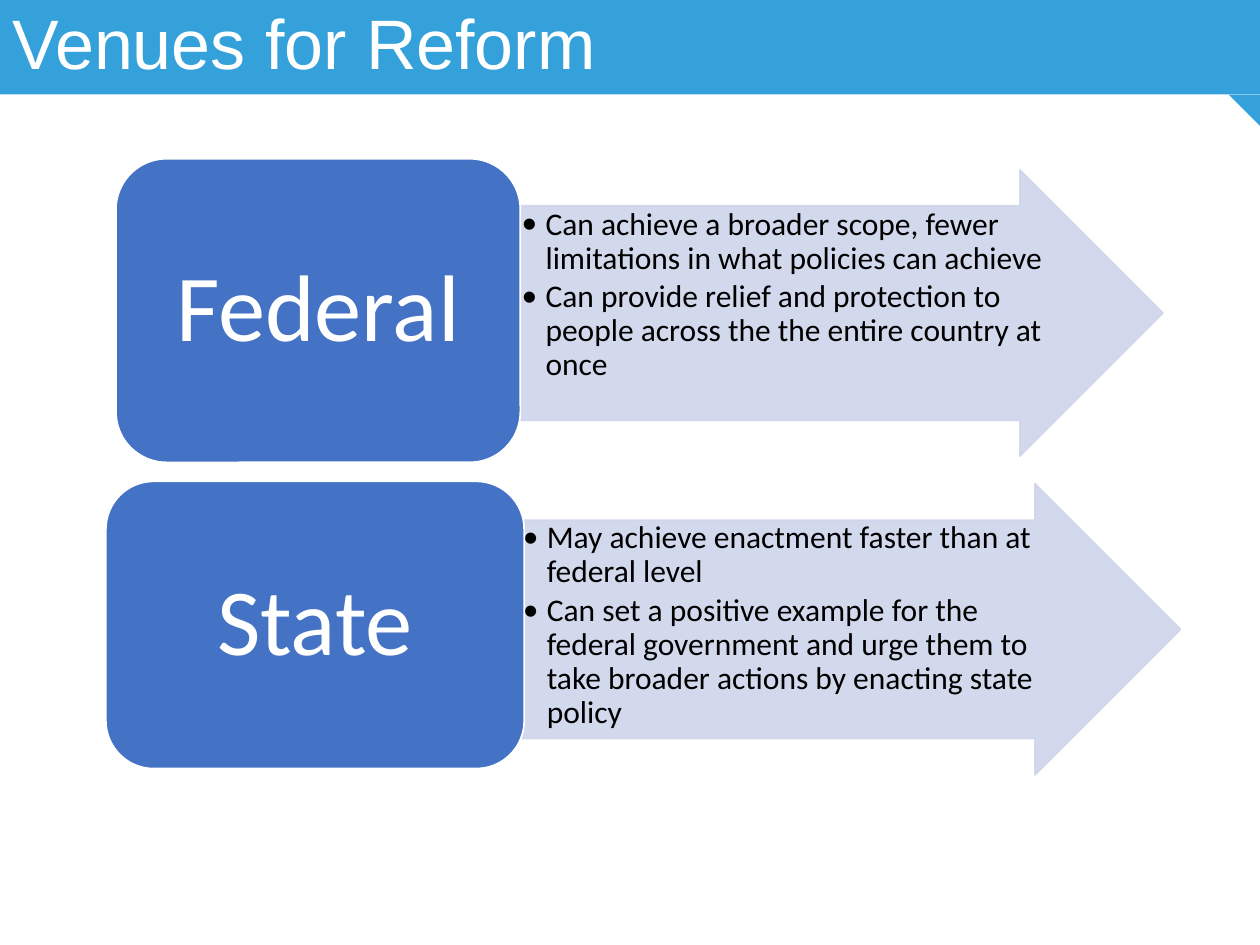
"""Build the Venues for Reform slide with federal and state arrows."""
import pptx
import pptx.dml.color
import pptx.enum.shapes
import pptx.enum.text
import pptx.oxml
import pptx.oxml.ns
import pptx.util
from pptx.util import Inches

COLORS = {"banner": "34A1DA", "arrow": "CFD5EA", "box": "4472C4", "white": "FFFFFF", "black": "000000"}
VENUES = [
    {
        "name": "Federal",
        "box": (0.92, 1.26, 3.21, 2.41),
        "arrow": (4.13, 1.35, 5.1, 2.27),
        "text": (4.13, 1.64, 4.25, 1.7),
        "points": [
            "Can achieve a broader scope, fewer limitations in what policies can achieve",
            "Can provide relief and protection to people across the the entire country at once",
        ],
    },
    {
        "name": "State",
        "box": (0.84, 3.82, 3.32, 2.28),
        "arrow": (4.14, 3.84, 5.23, 2.31),
        "text": (4.14, 4.13, 4.36, 1.73),
        "points": [
            "May achieve enactment faster than at federal level",
            "Can set a positive example for the federal government and urge them to "
            "take broader actions by enacting state policy",
        ],
    },
]
SHAPES = pptx.enum.shapes.MSO_SHAPE
ALIGN = pptx.enum.text.PP_ALIGN
ANCHOR = pptx.enum.text.MSO_ANCHOR
DRAWING = pptx.oxml.ns.nsdecls("a")
BULLET = (f'<a:buFont {DRAWING} typeface="Calibri"/>', f'<a:buChar {DRAWING} char="•"/>')

presentation = pptx.Presentation()
presentation.slide_width = Inches(10)
presentation.slide_height = Inches(7.5)
slide = presentation.slides.add_slide(presentation.slide_layouts[6])


def add_filled(kind, box, fill, line=None):
    shape = slide.shapes.add_shape(kind, *map(Inches, box))
    shape.shadow.inherit = False
    shape.fill.solid()
    shape.fill.fore_color.rgb = pptx.dml.color.RGBColor.from_string(COLORS[fill])
    if line:
        shape.line.color.rgb = pptx.dml.color.RGBColor.from_string(COLORS[line])
        shape.line.width = pptx.util.Pt(1)
    else:
        shape.line.fill.background()
    return shape


def write_text(shape, lines, font, size, color, align, anchor, margins, space_after=0):
    frame = shape.text_frame
    frame.word_wrap = True
    frame.vertical_anchor = anchor
    frame.margin_left, frame.margin_top, frame.margin_right, frame.margin_bottom = map(Inches, margins)
    frame.text = "\n".join(lines)
    for paragraph in frame.paragraphs:
        paragraph.alignment = align
        paragraph.line_spacing = 0.9
        paragraph.space_after = pptx.util.Pt(space_after)
        paragraph.font.name = font
        paragraph.font.size = pptx.util.Pt(size)
        paragraph.font.color.rgb = pptx.dml.color.RGBColor.from_string(COLORS[color])


add_filled(SHAPES.RECTANGLE, (0, 0, 10, 0.75), "banner")
corner = add_filled(SHAPES.RIGHT_TRIANGLE, (9.75, 0.75, 0.25, 0.25), "banner")
corner.rotation = 180

for venue in VENUES:
    arrow = add_filled(SHAPES.RIGHT_ARROW, venue["arrow"], "arrow", "arrow")
    arrow.adjustments[0] = 0.75
    arrow.adjustments[1] = 0.5
    for color in arrow._element.spPr.iter(pptx.oxml.ns.qn("a:srgbClr")):
        color.append(pptx.oxml.parse_xml(f'<a:alpha {DRAWING} val="90000"/>'))

    points = slide.shapes.add_textbox(*map(Inches, venue["text"]))
    write_text(points, venue["points"], "Calibri", 18, "black", ALIGN.LEFT, ANCHOR.TOP,
               (0.01, 0.01, 0.01, 0.01), 2.7)
    for paragraph in points.text_frame.paragraphs:
        properties = paragraph._p.get_or_add_pPr()
        properties.set("marL", str(Inches(0.19)))
        properties.set("indent", str(Inches(-0.19)))
        for element in BULLET:
            properties.find(pptx.oxml.ns.qn("a:defRPr")).addprevious(pptx.oxml.parse_xml(element))

    box = add_filled(SHAPES.ROUNDED_RECTANGLE, venue["box"], "box", "white")
    write_text(box, [venue["name"]], "Calibri", 54, "white", ALIGN.CENTER, ANCHOR.MIDDLE,
               (0.23, 0.11, 0.23, 0.11), 18.9)

title = slide.shapes.add_textbox(0, 0, Inches(7.94), Inches(0.75))
write_text(title, ["Venues for Reform"], "Arial", 40, "white", ALIGN.LEFT, ANCHOR.MIDDLE,
           (0.1, 0.05, 0.1, 0.05))

presentation.save("out.pptx")
